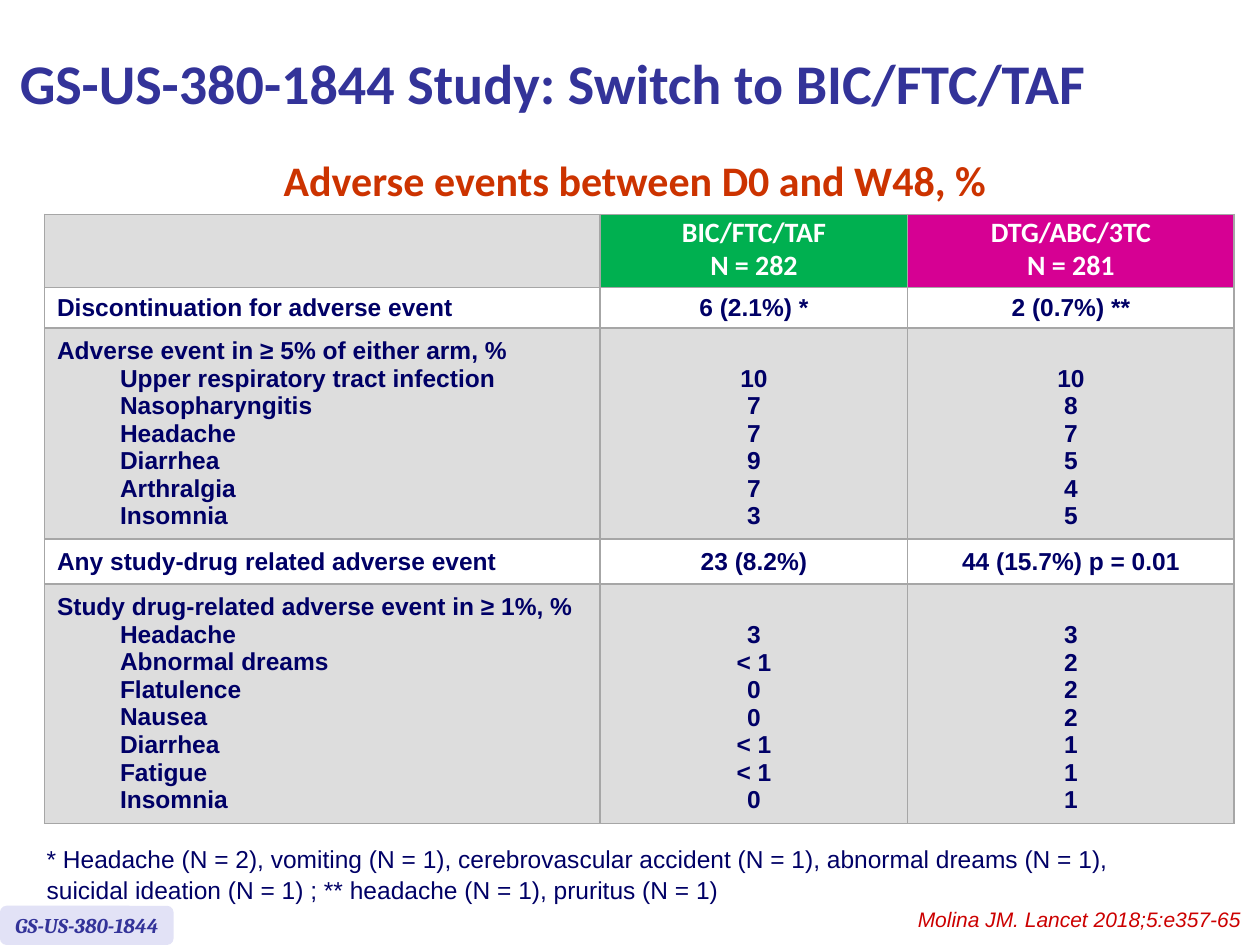
"""Build the adverse events slide of the GS-US-380-1844 study."""
from pptx import Presentation
from pptx.dml.color import RGBColor
from pptx.enum.shapes import MSO_SHAPE
from pptx.enum.text import MSO_ANCHOR, PP_ALIGN
from pptx.oxml import parse_xml
from pptx.oxml.ns import nsdecls
from pptx.util import Cm, Pt

COLOURS = {
    "title": "333399", "heading": "CC3300", "body": "000066", "citation": "CC0000",
    "tag": "E2E2F6", "white": "FFFFFF", "grey": "DDDDDD", "border": "A6A6A6",
    "bictegravir": "00B050", "dolutegravir": "D60093",
}


def write(para, text, font, size, colour, align=PP_ALIGN.LEFT, bold=False, italic=False):
    para.alignment = align
    for number, line in enumerate(text.split("\n")):
        if number:
            para.add_line_break()
        span = para.add_run()
        span.text = line
        span.font.name = font
        span.font.size = Pt(size)
        span.font.bold = bold
        span.font.italic = italic
        span.font.color.rgb = RGBColor.from_string(COLOURS[colour])


def add_text(page, left, top, width, height, text, font, size, colour, wrap=True, **style):
    box = page.shapes.add_textbox(Cm(left), Cm(top), Cm(width), Cm(height))
    box.text_frame.word_wrap = wrap
    write(box.text_frame.paragraphs[0], text, font, size, colour, **style)
    return box.text_frame


deck = Presentation()
deck.slide_width, deck.slide_height = Cm(25.4), Cm(19.05)
page = deck.slides.add_slide(deck.slide_layouts[6])

rows = [
    ([], ["BIC/FTC/TAF", "N = 282"], ["DTG/ABC/3TC", "N = 281"]),
    (["Discontinuation for adverse event"], ["6 (2.1%) *"], ["2 (0.7%) **"]),
    (["Adverse event in ≥ 5% of either arm, %", "Upper respiratory tract infection",
      "Nasopharyngitis", "Headache", "Diarrhea", "Arthralgia", "Insomnia"],
     ["10", "7", "7", "9", "7", "3"], ["10", "8", "7", "5", "4", "5"]),
    (["Any study-drug related adverse event"], ["23 (8.2%)"], ["44 (15.7%) p = 0.01"]),
    (["Study drug-related adverse event in ≥ 1%, %", "Headache", "Abnormal dreams",
      "Flatulence", "Nausea", "Diarrhea", "Fatigue", "Insomnia"],
     ["3", "< 1", "0", "0", "< 1", "< 1", "0"], ["3", "2", "2", "2", "1", "1", "1"]),
]
column_widths = [11.2, 6.2, 6.58]
row_heights = [1.48, 0.81, 4.25, 0.91, 4.82]
header_fills = ["grey", "bictegravir", "dolutegravir"]

table = page.shapes.add_table(
    len(rows), len(column_widths), Cm(0.9), Cm(4.32),
    Cm(sum(column_widths)), Cm(sum(row_heights))).table
for column, width in zip(table.columns, column_widths):
    column.width = Cm(width)
for row, height in zip(table.rows, row_heights):
    row.height = Cm(height)

for row_index, row in enumerate(rows):
    is_header = row_index == 0
    for column_index, lines in enumerate(row):
        cell = table.cell(row_index, column_index)
        cell.vertical_anchor = MSO_ANCHOR.MIDDLE
        cell.margin_left = cell.margin_right = Cm(0.25)
        below_group_name = column_index > 0 and len(row[0]) > 1
        cell.margin_top = Cm(0.69 if below_group_name else 0.13)
        cell.margin_bottom = Cm(0.13)
        for line_index, line in enumerate(lines):
            frame = cell.text_frame
            para = frame.add_paragraph() if line_index else frame.paragraphs[0]
            align = PP_ALIGN.CENTER if column_index else PP_ALIGN.LEFT
            if is_header:
                para.line_spacing = 0.8
                if line_index:
                    para.space_before = Pt(3.2)
                write(para, line, "Calibri", 16, "white", align, bold=True)
            else:
                if column_index == 0 and line_index:
                    para.level = 1
                    para._p.get_or_add_pPr().set("marL", str(Cm(1.27)))
                write(para, line, "Arial", 14, "body", align, bold=True)
        properties = cell._tc.get_or_add_tcPr()
        for side in ("lnL", "lnR", "lnT", "lnB"):
            properties.append(parse_xml(
                f'<a:{side} {nsdecls("a")} w="{Pt(1)}"><a:solidFill>'
                f'<a:srgbClr val="{COLOURS["border"]}"/></a:solidFill></a:{side}>'))
        fill = header_fills[column_index] if is_header else ("grey", "white")[row_index % 2]
        cell.fill.solid()
        cell.fill.fore_color.rgb = RGBColor.from_string(COLOURS[fill])

heading = add_text(page, 0.38, 3.48, 24.84, 0.89, "Adverse events between D0 and W48, %",
                   "Calibri", 24, "heading", align=PP_ALIGN.CENTER, bold=True)
heading.paragraphs[0].line_spacing = Pt(15.2)

footnote = add_text(
    page, 0.69, 16.87, 22.15, 1.45,
    "* Headache (N = 2), vomiting (N = 1), cerebrovascular accident (N = 1), "
    "abnormal dreams (N = 1),\n"
    "suicidal ideation (N = 1) ; ** headache (N = 1), pruritus (N = 1)",
    "Arial", 14, "body", wrap=False)
footnote.paragraphs[0].line_spacing = 1.05

title = add_text(page, 0.15, 0.13, 22.76, 3.07, "GS-US-380-1844 Study: Switch to BIC/FTC/TAF",
                 "Calibri", 32, "title", bold=True)
title.vertical_anchor = MSO_ANCHOR.MIDDLE

tag = page.shapes.add_shape(MSO_SHAPE.ROUNDED_RECTANGLE, Cm(0), Cm(18.26), Cm(3.5), Cm(0.79))
tag.shadow.inherit = False
tag.fill.solid()
tag.fill.fore_color.rgb = RGBColor.from_string(COLOURS["tag"])
tag.line.fill.background()
tag.text_frame.word_wrap = False
tag.text_frame.vertical_anchor = MSO_ANCHOR.MIDDLE
write(tag.text_frame.paragraphs[0], "GS-US-380-1844", "Cambria", 12, "title",
      PP_ALIGN.CENTER, bold=True, italic=True)

add_text(page, 16.38, 18.16, 8.89, 0.76, "Molina JM. Lancet 2018;5:e357-65",
         "Arial", 12, "citation", align=PP_ALIGN.RIGHT, italic=True)

deck.save("out.pptx")
